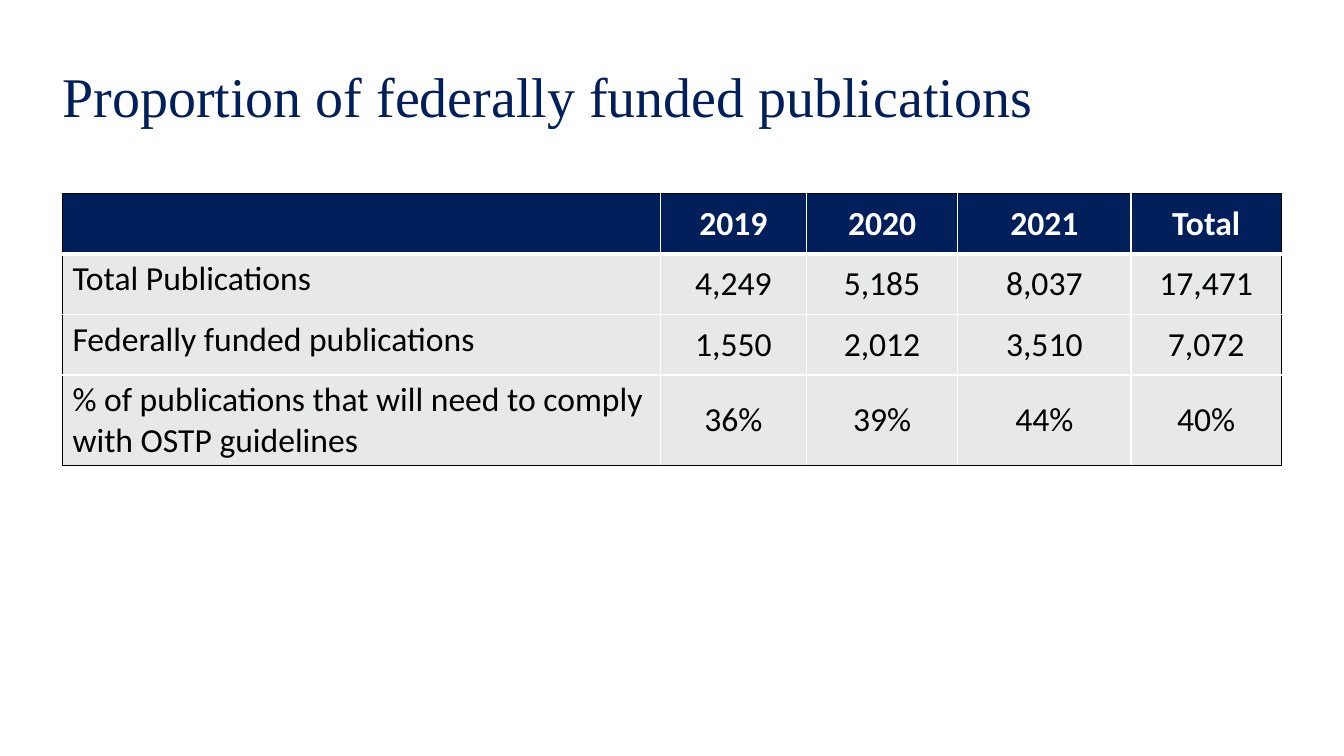
import pptx
import pptx.dml.color
import pptx.enum.text
import pptx.oxml
import pptx.oxml.ns
import pptx.util

COLORS = {"navy": "011F5B", "mist": "E7E8EA", "white": "FFFFFF", "black": "000000"}
ANCHOR = pptx.enum.text.MSO_ANCHOR
ALIGN = pptx.enum.text.PP_ALIGN

FUNDING_ROWS = [
    ["", "2019", "2020", "2021", "Total"],
    ["Total Publications", "4,249", "5,185", "8,037", "17,471"],
    ["Federally funded publications", "1,550", "2,012", "3,510", "7,072"],
    ["% of publications that will need to comply with OSTP guidelines",
     "36%", "39%", "44%", "40%"],
]
COLUMN_SHARES = [44.48, 10.88, 11.25, 12.9, 11.18]


class FundingSlide:
    heading_font = "Times New Roman"
    body_font = "Calibri"

    def __init__(self, deck):
        self.width, self.height = deck.slide_width, deck.slide_height
        self.slide = deck.slides.add_slide(deck.slide_layouts[5])

    def across(self, percent):
        return round(self.width * percent / 100)

    def down(self, percent):
        return round(self.height * percent / 100)

    def style(self, paragraph, font, size, color, bold, align):
        paragraph.alignment = align
        for run in paragraph.runs:
            run.font.name = font
            run.font.size = pptx.util.Pt(size)
            run.font.bold = bold
            run.font.color.rgb = pptx.dml.color.RGBColor.from_string(COLORS[color])

    def title(self, wording, left, top, width, height):
        heading = self.slide.shapes.title
        heading.left, heading.top = self.across(left), self.down(top)
        heading.width, heading.height = self.across(width), self.down(height)
        frame = heading.text_frame
        frame.text = wording
        frame.word_wrap = True
        frame.auto_size = pptx.enum.text.MSO_AUTO_SIZE.SHAPE_TO_FIT_TEXT
        frame.vertical_anchor = ANCHOR.MIDDLE
        frame.margin_left = frame.margin_right = 0
        frame.margin_top = frame.margin_bottom = 0
        frame.paragraphs[0].line_spacing = 0.9
        self.style(frame.paragraphs[0], self.heading_font, 40, "navy", False, ALIGN.LEFT)

    def borders(self, cell, edges):
        properties = cell._tc.get_or_add_tcPr()
        for side, (color, points) in edges.items():
            properties.append(pptx.oxml.parse_xml(
                f'<a:ln{side} {pptx.oxml.ns.nsdecls("a")} w="{pptx.util.Pt(points)}">'
                f'<a:solidFill><a:srgbClr val="{COLORS[color]}"/></a:solidFill>'
                f'</a:ln{side}>'))

    def table(self, rows, column_shares, left, top, row_height):
        grid = self.slide.shapes.add_table(
            len(rows), len(column_shares), self.across(left), self.down(top),
            self.across(sum(column_shares)), self.down(row_height * len(rows))).table
        for column, share in zip(grid.columns, column_shares):
            column.width = self.across(share)
        last_row, last_column = len(rows) - 1, len(column_shares) - 1
        for r, row in enumerate(rows):
            for c, wording in enumerate(row):
                cell = grid.cell(r, c)
                header, label = r == 0, c == 0
                self.borders(cell, {
                    "L": ("black" if label else "white", 1),
                    "R": ("black" if c == last_column else "white", 1),
                    "T": ("black" if header else "white", 1),
                    "B": ("black" if r == last_row else "white", 3 if header else 1),
                })
                cell.fill.solid()
                cell.fill.fore_color.rgb = pptx.dml.color.RGBColor.from_string(
                    COLORS["navy" if header else "mist"])
                cell.vertical_anchor = ANCHOR.TOP if label else ANCHOR.MIDDLE
                cell.text_frame.text = wording
                self.style(cell.text_frame.paragraphs[0], self.body_font, 24,
                           "white" if header else "black", header,
                           ALIGN.LEFT if label else ALIGN.CENTER)


def main():
    deck = pptx.Presentation()
    deck.slide_width = pptx.util.Inches(13.33)
    deck.slide_height = pptx.util.Inches(7.5)
    funding = FundingSlide(deck)
    funding.title("Proportion of federally funded publications", 4.65, 9.07, 90.75, 8.13)
    funding.table(FUNDING_ROWS, COLUMN_SHARES, 4.65, 25.6, 8)
    deck.save("out.pptx")


if __name__ == "__main__":
    main()
